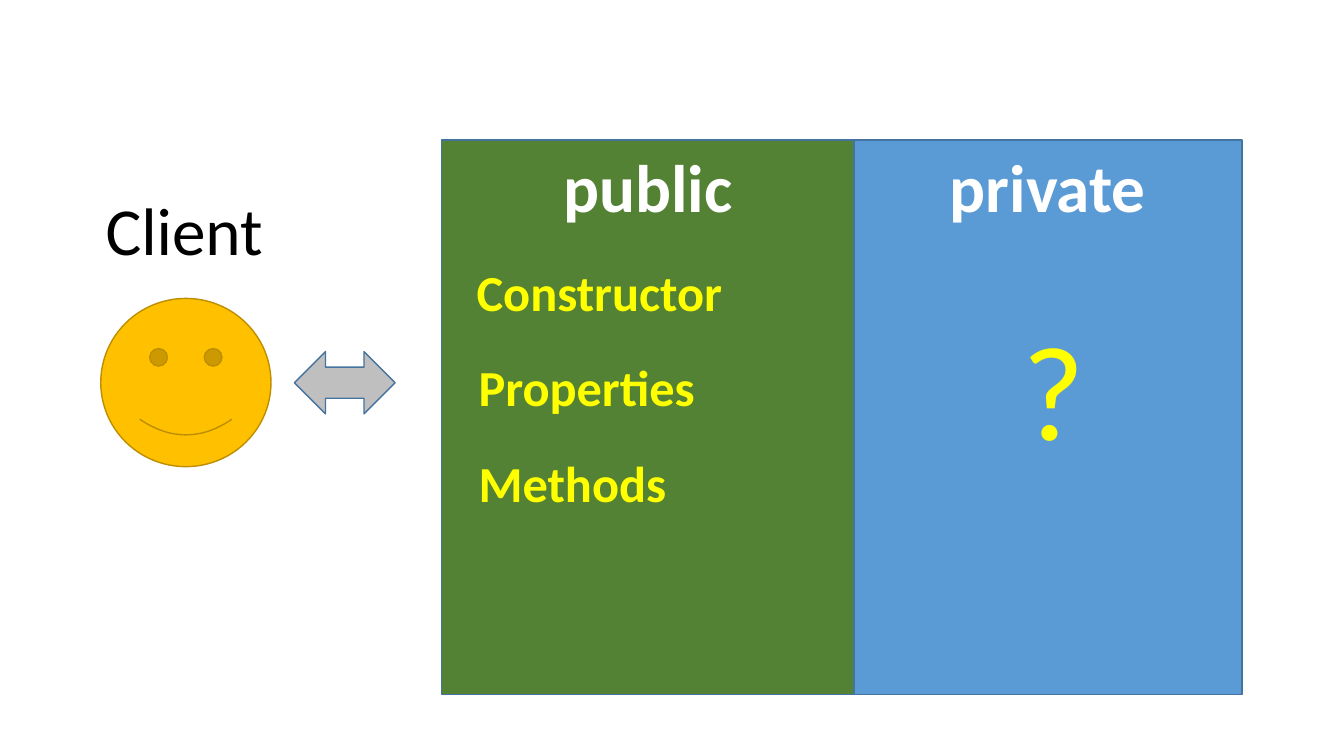
from pptx import Presentation
from pptx.dml.color import RGBColor
from pptx.enum.shapes import MSO_SHAPE as Preset
from pptx.enum.text import MSO_ANCHOR as Anchor, MSO_AUTO_SIZE as AutoSize, PP_ALIGN as Align
from pptx.util import Cm, Pt


def color(value):
    return RGBColor.from_string(value)


class SlideBuilder:
    font_name = "Calibri"
    outline = "43739E"
    accent = "FFFF00"

    def __init__(self, slide):
        self.slide = slide

    def set_text(self, frame, text, size, fill, bold=False, align=Align.LEFT):
        paragraph = frame.paragraphs[0]
        paragraph.text = text
        paragraph.alignment = align
        font = paragraph.font
        font.name = self.font_name
        font.size = Pt(size)
        font.bold = bold
        font.color.rgb = color(fill)

    def shape(self, preset, left, top, width, height, fill, line=outline):
        shape = self.slide.shapes.add_shape(preset, Cm(left), Cm(top), Cm(width), Cm(height))
        shape.shadow.inherit = False
        shape.fill.solid()
        shape.fill.fore_color.rgb = color(fill)
        shape.line.color.rgb = color(line)
        shape.line.width = Pt(1)
        return shape

    def panel(self, title, left, top, width, height, fill):
        panel = self.shape(Preset.RECTANGLE, left, top, width, height, fill)
        panel.text_frame.vertical_anchor = Anchor.TOP
        self.set_text(panel.text_frame, title, 48, "FFFFFF", True, Align.CENTER)

    def label(self, text, left, top, width, height, size, fill=accent, bold=False, wrap=False):
        box = self.slide.shapes.add_textbox(Cm(left), Cm(top), Cm(width), Cm(height))
        frame = box.text_frame
        frame.word_wrap = wrap
        frame.auto_size = AutoSize.SHAPE_TO_FIT_TEXT
        self.set_text(frame, text, size, fill, bold)


def main():
    presentation = Presentation()
    presentation.slide_width = Cm(33.87)
    presentation.slide_height = Cm(19.05)
    builder = SlideBuilder(presentation.slides.add_slide(presentation.slide_layouts[6]))

    panel_left, panel_top, panel_height = 11.13, 3.53, 13.97
    public_width, private_width = 10.39, 9.78
    builder.panel("public", panel_left, panel_top, public_width, panel_height, "548235")
    builder.panel("private", panel_left + public_width, panel_top, private_width, panel_height, "5B9BD5")

    builder.shape(Preset.SMILEY_FACE, 2.54, 7.52, 4.29, 4.24, "FFC000", "BD8E00")
    builder.shape(Preset.LEFT_RIGHT_ARROW, 7.42, 8.86, 2.54, 1.57, "BFBFBF")

    members = [("Constructor", 11.76, 6.78), ("Properties", 11.81, 6.02), ("Methods", 11.81, 5.31)]
    for row, (member, left, width) in enumerate(members):
        builder.label(member, left, 6.45 + row * 2.41, width, 1.8, 36, bold=True)

    builder.label("?", 25.53, 7.59, 3.96, 4.37, 96, wrap=True)
    builder.label("Client", 2.41, 4.62, 4.52, 2.31, 48, "000000")

    presentation.save("out.pptx")


if __name__ == "__main__":
    main()
